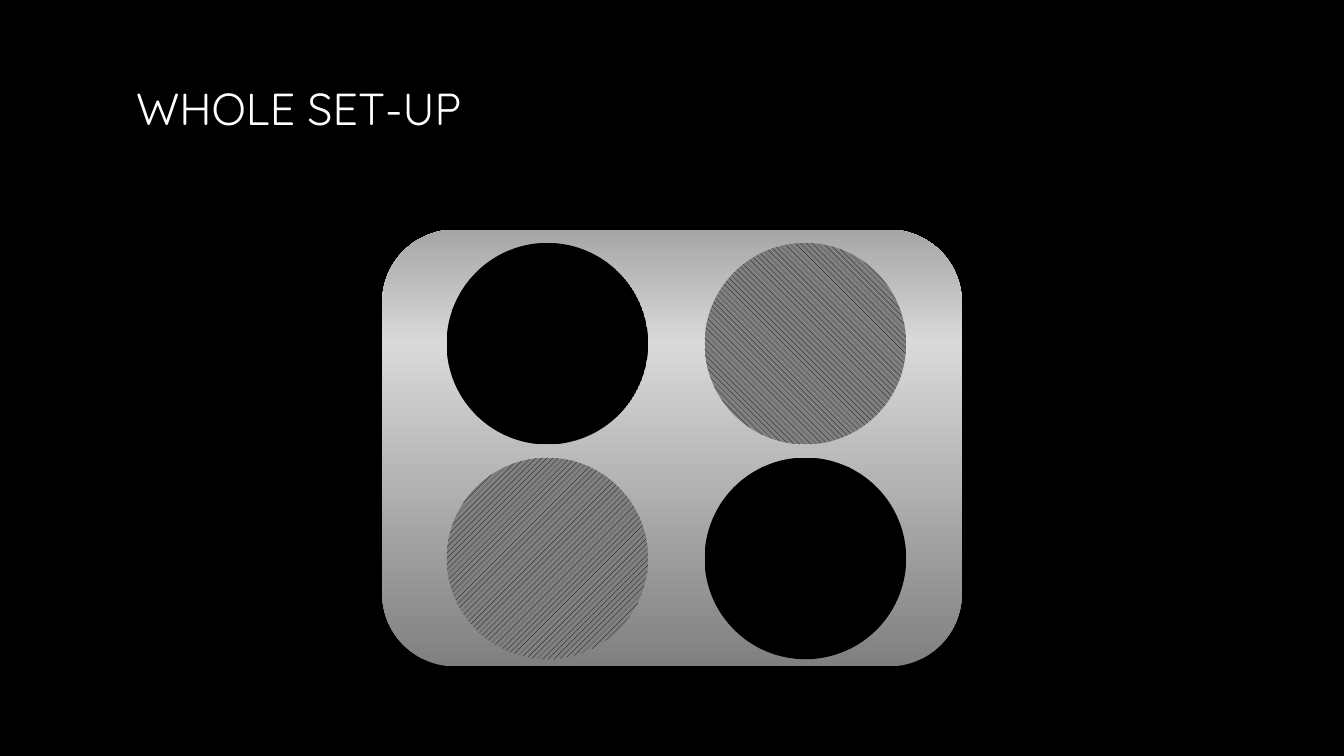
from copy import deepcopy

from pptx import Presentation
from pptx.dml.color import RGBColor
from pptx.enum.dml import MSO_PATTERN
from pptx.enum.shapes import MSO_SHAPE
from pptx.enum.text import MSO_ANCHOR, MSO_AUTO_SIZE, PP_ALIGN
from pptx.util import Pt

DISC_SIZE = 144
DISC_LEFT, DISC_TOP = 319, 173.5
COLUMN_STEP, ROW_STEP = 184.3, 153.4
DISC_PATTERNS = [
    [MSO_PATTERN.DARK_VERTICAL, MSO_PATTERN.WIDE_DOWNWARD_DIAGONAL],
    [MSO_PATTERN.WIDE_UPWARD_DIAGONAL, MSO_PATTERN.DARK_HORIZONTAL],
]


def color(value):
    return RGBColor.from_string(value)


def format_title(slide, text):
    title = slide.shapes.title
    title.left, title.top, title.width, title.height = Pt(90), Pt(1.5), Pt(780), Pt(150)
    frame = title.text_frame
    frame.word_wrap = True
    frame.auto_size = MSO_AUTO_SIZE.NONE
    frame.vertical_anchor = MSO_ANCHOR.MIDDLE
    paragraph = frame.paragraphs[0]
    paragraph.alignment = PP_ALIGN.LEFT
    run = paragraph.add_run()
    run.text = text
    run.font.name = "Quicksand"
    run.font.size = Pt(32)
    run.font.color.rgb = color("FFFFFF")


def add_plain_shape(slide, kind, left, top, width, height):
    shape = slide.shapes.add_shape(kind, Pt(left), Pt(top), Pt(width), Pt(height))
    shape.shadow.inherit = False
    shape.line.fill.background()
    return shape


def fill_gradient(shape, stops, angle):
    shape.fill.gradient()
    shape.fill.gradient_angle = angle
    # The default gradient has two stops: extend it to the number needed
    stop_list = shape.element.spPr.find(".//{*}gsLst")
    while len(stop_list) < len(stops):
        stop_list.append(deepcopy(stop_list[-1]))
    for stop, (position, value) in zip(shape.fill.gradient_stops, stops):
        stop.position = position
        stop.color.rgb = color(value)


def add_disc(slide, left, top, pattern):
    disc = add_plain_shape(slide, MSO_SHAPE.OVAL, left, top, DISC_SIZE, DISC_SIZE)
    disc.fill.patterned()
    disc.fill.pattern = pattern
    disc.fill.fore_color.rgb = color("000000")
    disc.fill.back_color.rgb = color("808080")


def main():
    presentation = Presentation()
    presentation.slide_width, presentation.slide_height = Pt(960), Pt(540)
    slide = presentation.slides.add_slide(presentation.slide_layouts[5])
    slide.background.fill.solid()
    slide.background.fill.fore_color.rgb = color("000000")

    format_title(slide, "WHOLE SET-UP")

    # Metal plate, shaded from bottom to top
    plate = add_plain_shape(slide, MSO_SHAPE.ROUNDED_RECTANGLE, 273, 164, 414, 312)
    fill_gradient(plate, [(0, "808080"), (0.74, "D9D9D9"), (1, "A6A6A6")], 90)

    # Grid of striped discs
    for row, patterns in enumerate(DISC_PATTERNS):
        for column, pattern in enumerate(patterns):
            add_disc(slide, DISC_LEFT + column * COLUMN_STEP,
                     DISC_TOP + row * ROW_STEP, pattern)

    presentation.save("out.pptx")


if __name__ == "__main__":
    main()
